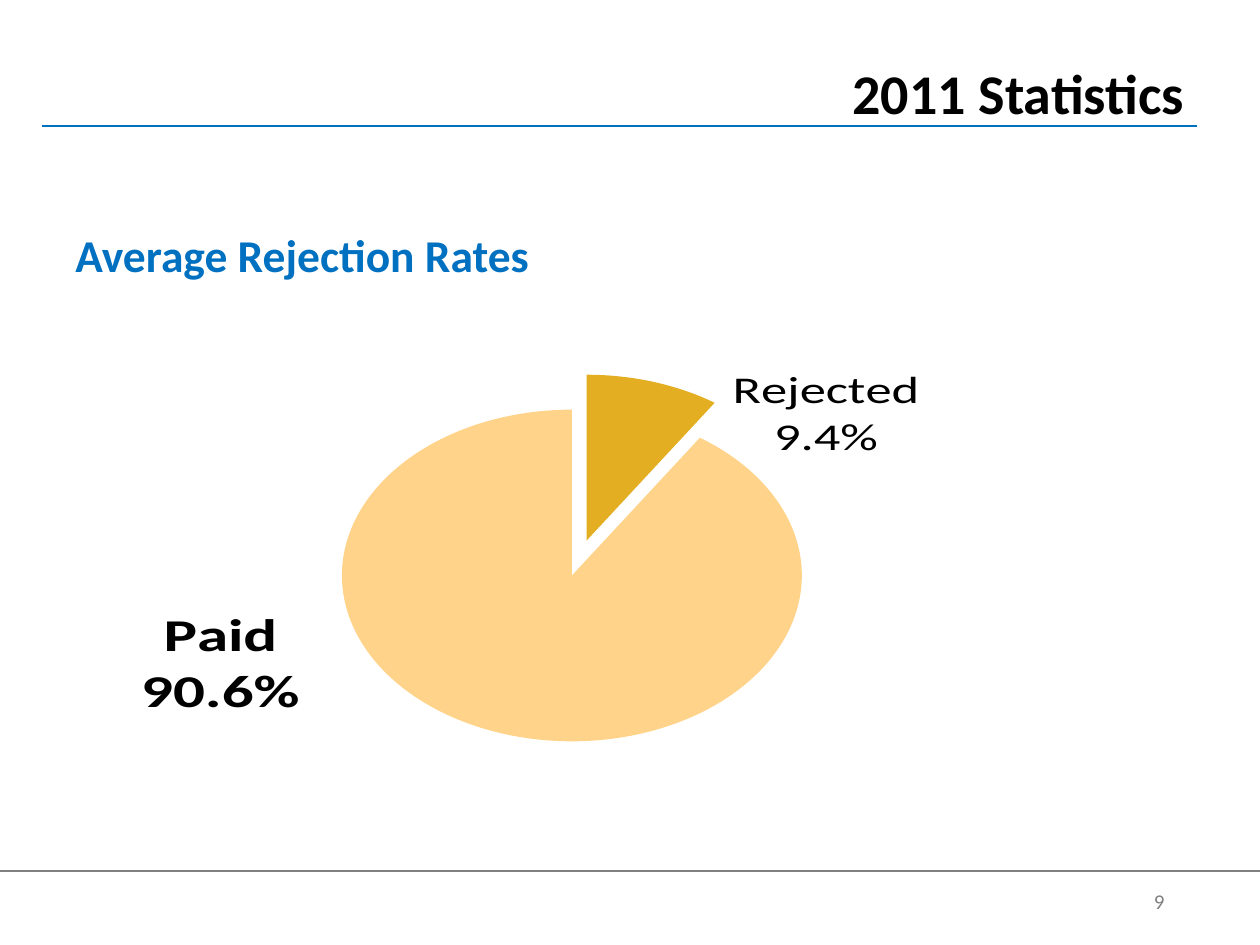
from lxml import etree
from pptx import Presentation, util as u
from pptx.chart.data import CategoryChartData
from pptx.dml.color import RGBColor
from pptx.enum import chart as charts, shapes, text
from pptx.oxml import ns

PX = 914400 // 126
FONT = "Calibri"
BLACK = RGBColor(0x00, 0x00, 0x00)
BLUE = RGBColor(0x00, 0x70, 0xC0)
GRAY = RGBColor(0x80, 0x80, 0x80)
GOLD = RGBColor(0xE3, 0xAE, 0x22)
PEACH = RGBColor(0xFF, 0xD4, 0x8A)


def px(*lengths):
    return [u.Emu(length * PX) for length in lengths]


def format_font(font, size, color, bold=False):
    font.name, font.size, font.bold = FONT, u.Pt(size), bold
    font.color.rgb = color


def add_text(page, box, words, size, color, bold=False, align=text.PP_ALIGN.LEFT):
    frame = page.shapes.add_textbox(*px(*box)).text_frame
    frame.word_wrap = True
    para = frame.paragraphs[0]
    para.alignment = align
    span = para.add_run()
    span.text = words
    format_font(span.font, size, color, bold)


def add_rule(page, left, right, y, color, width):
    line = page.shapes.add_connector(shapes.MSO_CONNECTOR.STRAIGHT, *px(left, y, right, y))
    line.line.color.rgb = color
    line.line.width = u.Pt(width)
    etree.SubElement(line._element.spPr, ns.qn("a:effectLst"))


def make_layout(**values):
    """Manual chart layout; values are fractions of the chart's size."""
    layout = etree.Element(ns.qn("c:layout"))
    manual = etree.SubElement(layout, ns.qn("c:manualLayout"))
    for name, value in values.items():
        etree.SubElement(manual, ns.qn("c:" + name)).set("val", str(value))
    return layout


def add_header(page, box):
    left, top, width, height = box
    add_rule(page, left, left + width, top + height, BLUE, 1.25)
    add_text(page, (left + width - 504, top - 1, 504, height), "2011 Statistics",
             32, BLACK, bold=True, align=text.PP_ALIGN.RIGHT)


def add_pie(page, box):
    width, height = box[2:]
    data = CategoryChartData(number_format="0.0%")
    data.categories = ["1", "2"]
    data.add_series("Series 1", (0.094, 0.906))
    chart = page.shapes.add_chart(charts.XL_CHART_TYPE.PIE, *px(*box), data).chart
    chart.has_legend = chart.has_title = False
    format_font(chart.font, 18, BLACK)
    plot = chart.plots[0]
    plot.vary_by_categories = True
    series = plot.series[0]
    labels = series.data_labels
    labels.show_value = True
    labels.number_format = "0.0%"
    labels.number_format_is_linked = False

    # Slices, with each label moved from its usual place by px
    slices = [
        ("Rejected\n9.4%", GOLD, 30, False, 22, (77, 61)),
        ("Paid\n90.6%", PEACH, 36, True, 0, (-203, -182)),
    ]
    for index, (words, color, size, bold, explosion, shift) in enumerate(slices):
        point = series.points[index]
        point.format.fill.solid()
        point.format.fill.fore_color.rgb = color
        point.format.line.fill.background()
        label = point.data_label
        label.text_frame.text = words
        for para in label.text_frame.paragraphs:
            for span in para.runs:
                format_font(span.font, size, BLACK, bold)
        label.position = charts.XL_LABEL_POSITION.OUTSIDE_END
        label_xml = series._element.xpath("c:dLbls/c:dLbl")[index]
        label_xml.insert(1, make_layout(x=shift[0] / width, y=shift[1] / height))
        if explosion:
            point_xml = series._element.xpath("c:dPt")[index]
            exploded = etree.Element(ns.qn("c:explosion"))
            exploded.set("val", str(explosion))
            point_xml.find(ns.qn("c:spPr")).addprevious(exploded)
    for leader in series._element.xpath("c:dLbls/c:showLeaderLines"):
        leader.set("val", "0")

    # Plot area
    area = chart._chartSpace.xpath("c:chart/c:plotArea")[0]
    for layout in area.findall(ns.qn("c:layout")):
        area.remove(layout)
    area.insert(0, make_layout(layoutTarget="inner", xMode="edge", yMode="edge",
                               x=289 / width, y=58 / height,
                               w=460 / width, h=460 / height))


def add_footer(page, box):
    left, top, width, height = box
    add_rule(page, left, left + width, top, GRAY, 0.75)
    add_text(page, (left + 68, top + 11, width - 151, height), "9",
             12, GRAY, align=text.PP_ALIGN.RIGHT)


def main():
    deck = Presentation()
    deck.slide_width, deck.slide_height = px(1260, 945)
    page = deck.slides.add_slide(deck.slide_layouts[6])
    add_header(page, (42, 53, 1155, 73))
    add_text(page, (63, 221, 1134, 84), "Average Rejection Rates", 26, BLUE, bold=True)
    add_pie(page, (53, 284, 1144, 567))
    add_footer(page, (0, 871, 1260, 43))
    deck.save("out.pptx")


if __name__ == "__main__":
    main()
